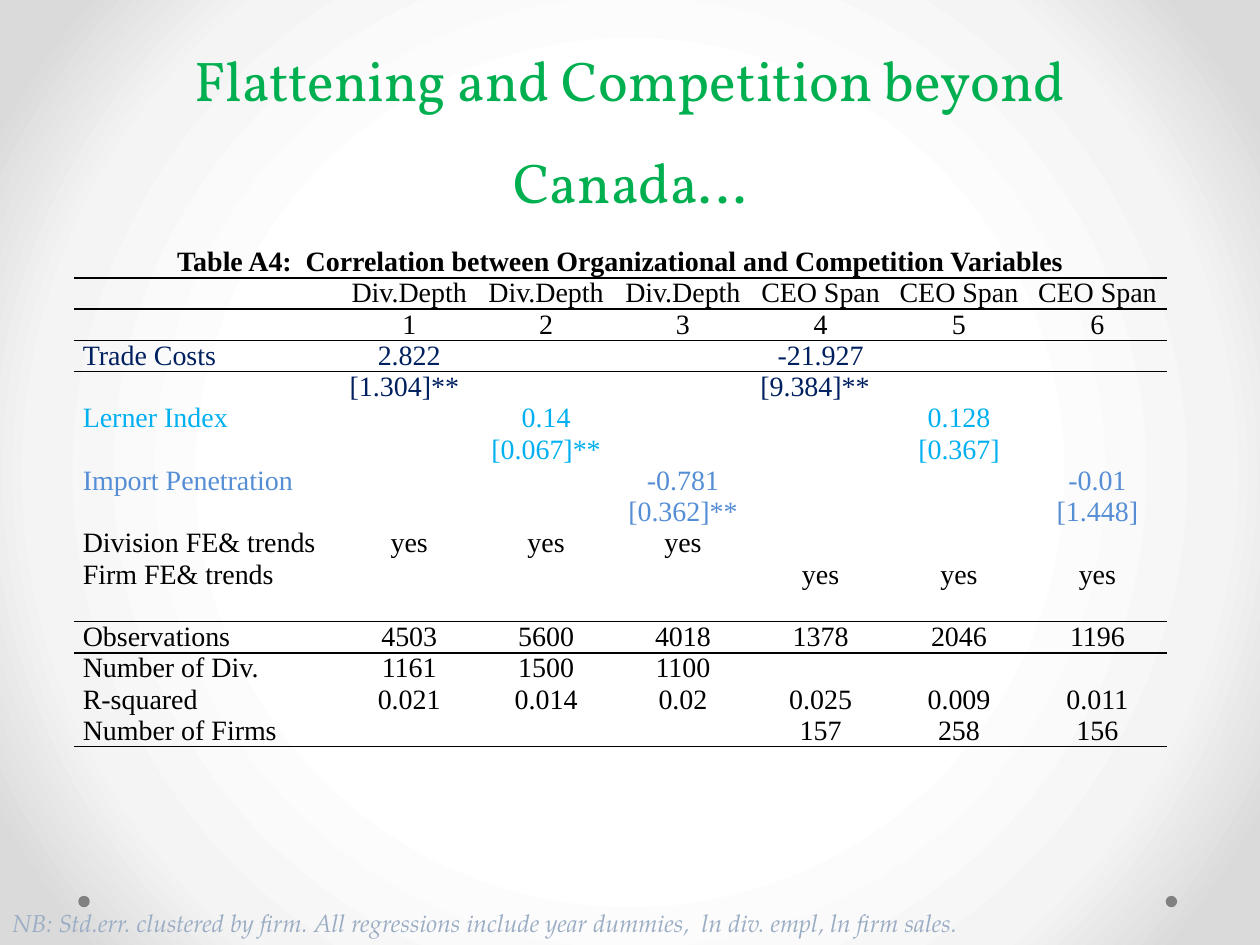
import lxml.etree
import pptx
import pptx.dml.color
import pptx.enum.dml
import pptx.enum.shapes
import pptx.enum.text
import pptx.oxml
import pptx.oxml.ns
import pptx.util

Cm, Pt = pptx.util.Cm, pptx.util.Pt
ALIGN, ANCHOR = pptx.enum.text.PP_ALIGN, pptx.enum.text.MSO_ANCHOR
qn = pptx.oxml.ns.qn

BLACK, NAVY, CYAN, BLUE = "000000", "002060", "00B0F0", "558ED5"
NO_GRID_STYLE = "{2D5ABB26-0587-4C30-8999-92F81FD0307C}"
CAPTION = "Table A4:  Correlation between Organizational and Competition Variables"
ROWS = [
    (BLACK, [CAPTION, "", "", "", "", "", ""]),
    (BLACK, ["", "Div.Depth", "Div.Depth", "Div.Depth", "CEO Span", "CEO Span", "CEO Span"]),
    (BLACK, ["", "1", "2", "3", "4", "5", "6"]),
    (NAVY, ["Trade Costs", "2.822", "", "", "-21.927", "", ""]),
    (NAVY, ["", "[1.304]**", "", "", "[9.384]**", "", ""]),
    (CYAN, ["Lerner Index", "", "0.14", "", "", "0.128", ""]),
    (CYAN, ["", "", "[0.067]**", "", "", "[0.367]", ""]),
    (BLUE, ["Import Penetration", "", "", "-0.781", "", "", "-0.01"]),
    (BLUE, ["", "", "", "[0.362]**", "", "", "[1.448]"]),
    (BLACK, ["Division FE& trends", "yes", "yes", "yes", "", "", ""]),
    (BLACK, ["Firm FE& trends", "", "", "", "yes", "yes", "yes"]),
    (BLACK, ["", "", "", "", "", "", ""]),
    (BLACK, ["Observations", "4503", "5600", "4018", "1378", "2046", "1196"]),
    (BLACK, ["Number of Div.", "1161", "1500", "1100", "", "", ""]),
    (BLACK, ["R-squared", "0.021", "0.014", "0.02", "0.025", "0.009", "0.011"]),
    (BLACK, ["Number of Firms", "", "", "", "157", "258", "156"]),
]
CAPTION_ROW, TRADE_ERROR_ROW = 0, 4
RULES_BELOW = (0, 2, 11, 15)


def rgb(color):
    """Turn a hex string into a colour."""
    return pptx.dml.color.RGBColor.from_string(color)


def style(p, font, size, color, align=ALIGN.LEFT, bold=False, italic=False):
    """Set the font and alignment of a paragraph."""
    p.alignment = align
    f = p.font
    f.name, f.size, f.bold, f.italic = font, Pt(size), bold, italic
    f.color.rgb = rgb(color)


def set_background(s):
    """Give the slide a radial grey gradient."""
    fill = s.background.fill
    fill.gradient()
    grad = s.background._cSld.find(".//" + qn("a:gradFill"))
    for child in list(grad):
        grad.remove(child)
    stops = lxml.etree.SubElement(grad, qn("a:gsLst"))
    for pos, color in ((50, "FFFFFF"), (76, "F4F4F4"), (92, "DADADA")):
        gs = lxml.etree.SubElement(stops, qn("a:gs"), pos=str(pos * 1000))
        lxml.etree.SubElement(gs, qn("a:srgbClr"), val=color)
    circle = lxml.etree.SubElement(grad, qn("a:path"), {"path": "circle"})
    lxml.etree.SubElement(circle, qn("a:fillToRect"), dict.fromkeys("ltrb", "50000"))


def add_dot(s, left):
    """Add a grey dot near the foot of the slide."""
    sp = s.shapes.add_shape(pptx.enum.shapes.MSO_SHAPE.OVAL, left, Cm(18.06), Cm(0.23), Cm(0.23))
    sp.shadow.inherit = False
    sp.fill.solid()
    sp.fill.fore_color.rgb = rgb("808080")
    sp.line.fill.background()


def set_title(s, text):
    """Place and format the title."""
    sp = s.shapes.title
    sp.left, sp.top, sp.width, sp.height = Cm(1.27), Cm(0), Cm(22.86), Cm(4.45)
    tf = sp.text_frame
    tf.text = text
    tf.vertical_anchor = ANCHOR.BOTTOM
    p = tf.paragraphs[0]
    p.line_spacing = Pt(58)
    style(p, "Vollkorn", 32, "00B050", ALIGN.CENTER)


def add_rule(cell, tag):
    """Draw a thin black border on one side of a cell."""
    ln = lxml.etree.Element(qn(tag), w=str(Pt(1)))
    fill = lxml.etree.SubElement(ln, qn("a:solidFill"))
    lxml.etree.SubElement(fill, qn("a:srgbClr"), val=BLACK)
    cell._tc.get_or_add_tcPr().insert(0, ln)


def fill_cell(cell, text, color, align, bold):
    """Write one table cell."""
    cell.fill.background()
    cell.margin_left = cell.margin_right = Cm(0.18)
    cell.margin_top = cell.margin_bottom = 0
    cell.vertical_anchor = ANCHOR.BOTTOM
    p = cell.text_frame.paragraphs[0]
    p.text = text
    style(p, "Times New Roman", 16, color, align, bold)
    if not text:
        end = lxml.etree.SubElement(p._p, qn("a:endParaRPr"), sz="1600")
        lxml.etree.SubElement(end, qn("a:latin"), typeface="Times New Roman")


def add_regression_table(s):
    """Add the table of regression results."""
    widths = [5.38] + [2.76] * 3 + [2.79] * 3
    height = Cm(0.63)
    frame = s.shapes.add_table(len(ROWS), len(widths), Cm(1.49), Cm(4.97),
                               Cm(sum(widths)), height * len(ROWS))
    table = frame.table
    table.first_row = table.horz_banding = False
    table._tbl.tblPr.find(qn("a:tableStyleId")).text = NO_GRID_STYLE
    for column, width in zip(table.columns, widths):
        column.width = Cm(width)
    for i, (color, texts) in enumerate(ROWS):
        table.rows[i].height = height
        for j, text in enumerate(texts):
            cell = table.cell(i, j)
            centred = i == CAPTION_ROW or (j > 0 and i != TRADE_ERROR_ROW)
            fill_cell(cell, text, color, ALIGN.CENTER if centred else ALIGN.LEFT, i == CAPTION_ROW)
            if i in RULES_BELOW:
                add_rule(cell, "a:lnB")
            if i - 1 in RULES_BELOW:
                add_rule(cell, "a:lnT")
    table.cell(0, 0).merge(table.cell(0, len(widths) - 1))


def add_note(s, text):
    """Add the footnote along the bottom edge."""
    tf = s.shapes.add_textbox(Cm(0), Cm(18.19), Cm(25.4), Cm(0.86)).text_frame
    tf.word_wrap = True
    tf.auto_size = pptx.enum.text.MSO_AUTO_SIZE.SHAPE_TO_FIT_TEXT
    tf.text = text
    style(tf.paragraphs[0], "TeX Gyre Pagella", 14, "9BADC4", italic=True)


def main():
    """Build the slide and save it."""
    prs = pptx.Presentation()
    prs.slide_width, prs.slide_height = Cm(25.4), Cm(19.05)
    s = prs.slides.add_slide(prs.slide_layouts[5])
    set_background(s)
    for left in (23.5, 1.58):
        add_dot(s, Cm(left))
    set_title(s, "Flattening and Competition beyond Canada…")
    add_regression_table(s)
    add_note(s, "NB: Std.err. clustered by firm. All regressions include year dummies,  "
                "ln div. empl, ln firm sales.")
    prs.save("out.pptx")


if __name__ == "__main__":
    main()
